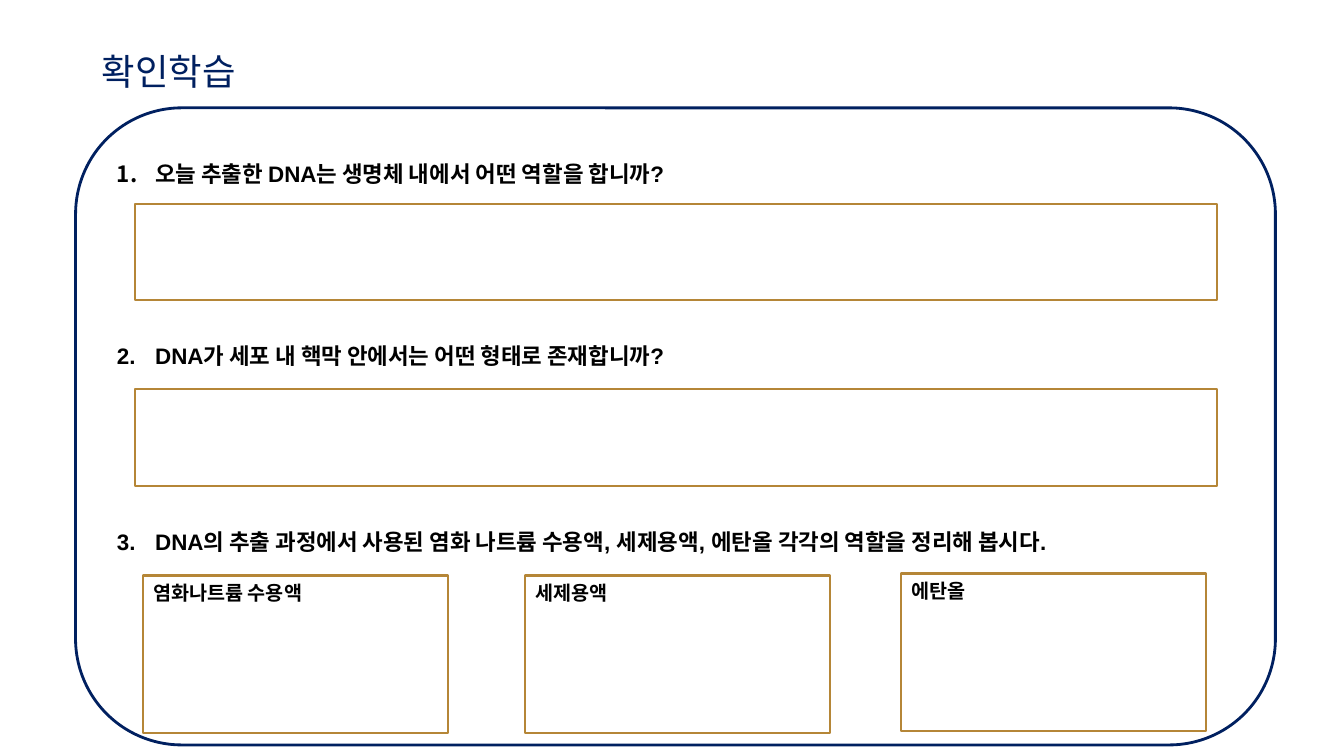
from lxml import etree
from pptx import Presentation
from pptx.dml.color import RGBColor
from pptx.enum.shapes import MSO_SHAPE
from pptx.enum.text import MSO_ANCHOR, MSO_AUTO_SIZE, PP_ALIGN
from pptx.oxml.ns import qn
from pptx.util import Inches, Pt

RECTANGLE, ROUNDED = MSO_SHAPE.RECTANGLE, MSO_SHAPE.ROUNDED_RECTANGLE
TOP, LEFT, NO_FIT = MSO_ANCHOR.TOP, PP_ALIGN.LEFT, MSO_AUTO_SIZE.NONE

COLORS = {"navy": "002060", "gold": "B58637", "white": "FFFFFF", "black": "000000", "shadow": "808080"}
TITLE = "확인학습"
QUESTIONS = [
    ("오늘 추출한 DNA는 생명체 내에서 어떤 역할을 합니까?", 0),
    ("DNA가 세포 내 핵막 안에서는 어떤 형태로 존재합니까?", 106),
    ("DNA의 추출 과정에서 사용된 염화 나트륨 수용액, 세제용액, 에탄올 각각의 역할을 정리해 봅시다.", 109),
]
ANSWER_TOPS = [2.02, 3.86]
SOLUTIONS = [("염화나트륨 수용액", 1.42, 5.71), ("세제용액", 5.21, 5.71), ("에탄올", 8.94, 5.69)]


def color(name):
    return RGBColor.from_string(COLORS[name])


def place(shape, left, top, width, height):
    shape.left, shape.top = Inches(left), Inches(top)
    shape.width, shape.height = Inches(width), Inches(height)


def prepare(frame, inset):
    frame.word_wrap = True
    frame.auto_size = NO_FIT
    frame.vertical_anchor = TOP
    frame.margin_left = frame.margin_right = Inches(0.1)
    frame.margin_top = frame.margin_bottom = Inches(inset)


def style(para, font, size, ink, bold):
    para.alignment = LEFT
    for span in para.runs:
        span.font.name = font
        span.font.size = Pt(size)
        span.font.bold = bold
        span.font.color.rgb = color(ink)


def add_box(page, preset, bounds, ink, weight):
    box = page.shapes.add_shape(preset, *[Inches(value) for value in bounds])
    box.shadow.inherit = False
    box.fill.solid()
    box.fill.fore_color.rgb = color("white")
    box.line.color.rgb = color(ink)
    box.line.width = Pt(weight)
    return box


def add_text_shadow(span):
    effects = etree.Element(qn("a:effectLst"))
    shadow = etree.SubElement(effects, qn("a:outerShdw"), blurRad="38100", dist="38100", dir="2700000")
    etree.SubElement(shadow, qn("a:srgbClr"), val=COLORS["shadow"])
    span.font._element.find(qn("a:solidFill")).addnext(effects)


def number(para):
    props = para._p.get_or_add_pPr()
    props.set("marL", str(Inches(0.38)))
    props.set("indent", str(-Inches(0.38)))
    etree.SubElement(props, qn("a:buFont"), typeface="Arial")
    etree.SubElement(props, qn("a:buAutoNum"), type="arabicPeriod")


def main():
    deck = Presentation()
    deck.slide_width, deck.slide_height = Inches(13.33), Inches(7.5)
    page = deck.slides.add_slide(deck.slide_layouts[1])

    title = page.shapes.title
    place(title, 0.91, 0.39, 9.4, 0.48)
    title.text_frame.text = TITLE
    prepare(title.text_frame, 0.1)
    heading = title.text_frame.paragraphs[0]
    style(heading, "Quicksand", 26, "navy", False)
    add_text_shadow(heading.runs[0])

    panel = add_box(page, ROUNDED, (0.75, 1.07, 11.9, 6.32), "navy", 2)
    title._element.addprevious(panel._element)

    body = page.placeholders[1]
    place(body, 1.06, 1.52, 11.2, 4.2)
    frame = body.text_frame
    frame.text = "\n".join(text for text, gap in QUESTIONS)
    prepare(frame, 0)
    for para, (text, gap) in zip(frame.paragraphs, QUESTIONS):
        style(para, "Arial", 16, "black", True)
        para.line_spacing = Pt(24)
        para.space_before = Pt(gap)
        number(para)

    for top in ANSWER_TOPS:
        add_box(page, RECTANGLE, (1.34, top, 10.73, 0.96), "gold", 1.5)
    for name, left, top in SOLUTIONS:
        box = add_box(page, RECTANGLE, (left, top, 3.02, 1.56), "gold", 1.5)
        box.text_frame.text = name
        prepare(box.text_frame, 0.05)
        style(box.text_frame.paragraphs[0], "Quicksand", 14, "black", True)

    deck.save("out.pptx")


if __name__ == "__main__":
    main()
